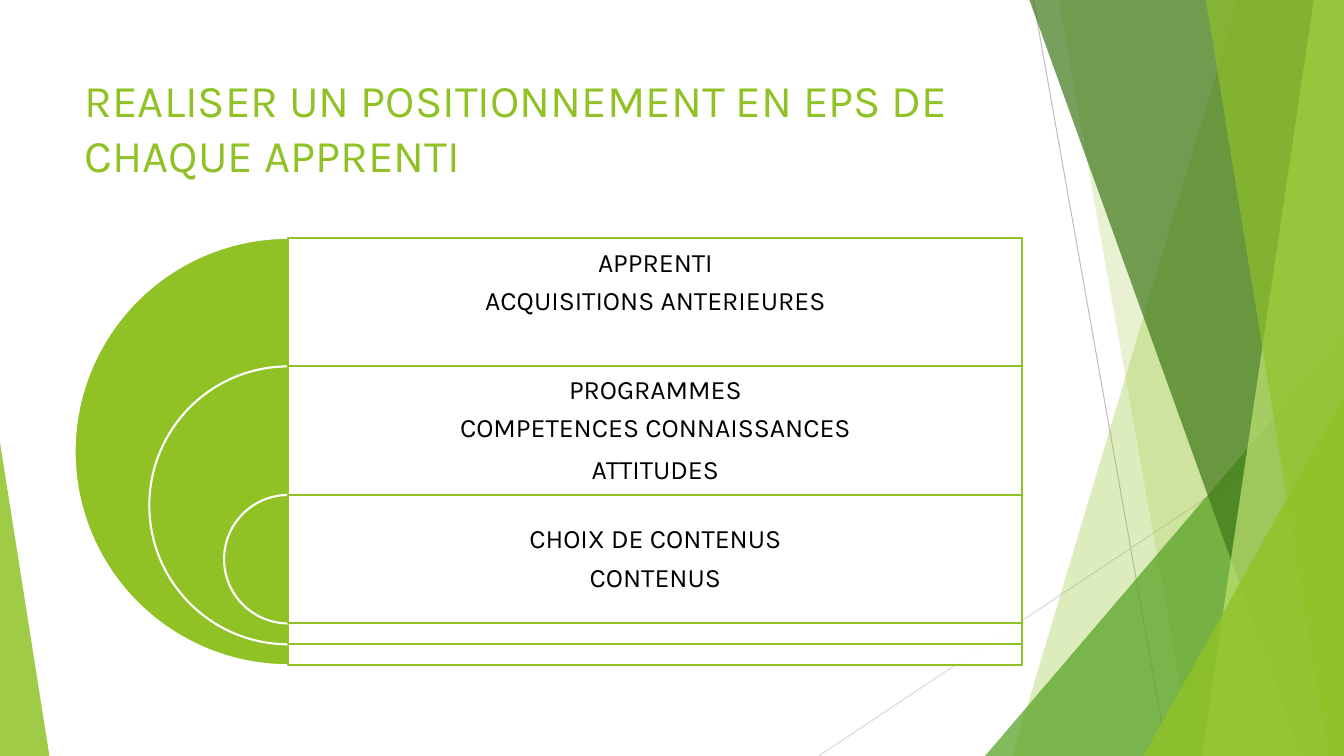
from lxml.etree import SubElement
from pptx import Presentation
from pptx.dml.color import RGBColor
from pptx.enum.shapes import MSO_CONNECTOR, MSO_SHAPE as SHAPE
from pptx.enum.text import MSO_ANCHOR as ANCHOR, PP_ALIGN as ALIGN
from pptx.oxml.ns import qn
from pptx.util import Inches, Pt

GREEN = RGBColor(0x90, 0xC2, 0x26)
LEAF = RGBColor(0x54, 0xA0, 0x21)
FOREST = RGBColor(0x3F, 0x78, 0x19)
LIME = RGBColor(0xC0, 0xE4, 0x74)
GREY = RGBColor(0xBF, 0xBF, 0xBF)
LIGHT_GREY = RGBColor(0xD9, 0xD9, 0xD9)
WHITE = RGBColor(0xFF, 0xFF, 0xFF)
BLACK = RGBColor(0, 0, 0)
FONT = "Karla"

# Content
TITLE = "REALISER UN POSITIONNEMENT EN EPS DE CHAQUE APPRENTI"
STAGES = [
    ["APPRENTI", "ACQUISITIONS ANTERIEURES"],
    ["PROGRAMMES", "COMPETENCES CONNAISSANCES", "ATTITUDES"],
    ["CHOIX DE CONTENUS", "CONTENUS"],
]
SPARE_BELOW = [0.38, 0, 0]  # extra room under each stage's text

# Backdrop: rays are (start, end, colour)
WIDTH, HEIGHT = 13.33, 7.5
RAYS = [
    ((10.25, 0), (11.58, HEIGHT), GREY),
    ((WIDTH, 4.03), (8.12, HEIGHT), LIGHT_GREY),
]
# Facets reach the right edge: (top left x, bottom left x, colour, opacity %)
# Wedges stand on the bottom edge: (left, width, height, apex share, colour, opacity %)
BACKDROP = [
    (12.28, 10.04, GREEN, 30),
    (10.5, 11.83, GREEN, 20),
    (9.77, 3.56, 4.17, 1, LEAF, 72),
    (10.21, 12.91, FOREST, 70),
    (13.03, 11.92, LIME, 70),
    (11.96, 13.18, GREEN, 65),
    (11.34, 1.99, 3.57, 1, GREEN, 80),
    (0, 0.49, 3.11, 0, GREEN, 85),
]

# Diagram grid
LEFT, TOP, COLUMN = 0.74, 2.36, 9.4
OUTER, ROW = 4.24, 1.275
SHRINK = (OUTER - ROW) / (len(STAGES) - 1)
AXIS = LEFT + OUTER / 2
PANEL_WIDTH = LEFT + COLUMN - AXIS
PAD = 0.08

prs = Presentation()
prs.slide_width, prs.slide_height = Inches(WIDTH), Inches(HEIGHT)
slide = prs.slides.add_slide(prs.slide_layouts[5])
shapes = slide.shapes


def paint(part, colour, opacity=100, outline=None):
    part.shadow.inherit = False
    part.fill.solid()
    part.fill.fore_color.rgb = colour
    if opacity < 100:
        solid = part.fill._xPr.find(qn("a:solidFill"))
        SubElement(solid[0], qn("a:alpha"), val=str(opacity * 1000))
    if outline is None:
        part.line.fill.background()
    else:
        part.line.color.rgb = outline
        part.line.width = Pt(1.5)


def add_preset(preset, *box):
    return shapes.add_shape(preset, *map(Inches, box))


def add_facet(top_x, bottom_x):
    corners = [(WIDTH, 0), (WIDTH, HEIGHT), (bottom_x, HEIGHT)]
    outline = shapes.build_freeform(Inches(top_x), 0)
    outline.add_line_segments([(Inches(x), Inches(y)) for x, y in corners])
    return outline.convert_to_shape()


def add_wedge(left, width, height, apex):
    wedge = add_preset(SHAPE.ISOSCELES_TRIANGLE, left, HEIGHT - height, width, height)
    wedge.adjustments[0] = apex
    return wedge


# Backdrop
for start, end, colour in RAYS:
    ray = shapes.add_connector(MSO_CONNECTOR.STRAIGHT, *map(Inches, start + end))
    ray.line.color.rgb = colour
    ray.line.width = Pt(0.75)
    SubElement(ray._element.spPr, qn("a:effectLst"))
for *geometry, colour, opacity in BACKDROP:
    add = add_facet if len(geometry) == 2 else add_wedge
    paint(add(*geometry), colour, opacity)

# Title
title = shapes.title
title.left, title.top = Inches(LEFT), Inches(0.67)
title.width, title.height = Inches(COLUMN), Inches(1.44)
title.text_frame.text = TITLE
title.text_frame.vertical_anchor = ANCHOR.TOP
heading = title.text_frame.paragraphs[0]
heading.alignment = ALIGN.LEFT
heading.font.size, heading.font.name = Pt(32.4), FONT
heading.font.color.rgb = GREEN

# Nested half discs, each with its panel and text
for i, (lines, spare) in enumerate(zip(STAGES, SPARE_BELOW)):
    top, size = TOP + i * ROW, OUTER - i * SHRINK
    disc = add_preset(SHAPE.PIE, AXIS - size / 2, top, size, size)
    disc.adjustments[0], disc.adjustments[1] = 54, 162
    paint(disc, GREEN, outline=WHITE)
    panel = add_preset(SHAPE.RECTANGLE, AXIS, top, PANEL_WIDTH, size)
    paint(panel, WHITE, 90, GREEN)

    label = shapes.add_textbox(*map(Inches, (AXIS, top, PANEL_WIDTH, ROW)))
    frame = label.text_frame
    frame.word_wrap = True
    frame.vertical_anchor = ANCHOR.MIDDLE
    frame.margin_left = frame.margin_right = frame.margin_top = Inches(PAD)
    frame.margin_bottom = Inches(PAD + spare)
    frame.text = "\n".join(lines)
    for paragraph in frame.paragraphs:
        paragraph.alignment = ALIGN.CENTER
        paragraph.line_spacing, paragraph.space_after = 0.9, Pt(7)
        paragraph.font.size, paragraph.font.name = Pt(19), FONT
        paragraph.font.color.rgb = BLACK
    if len(lines) > 2:
        paragraph.line_spacing, paragraph.space_after = 1.0, Pt(0)

prs.save("out.pptx")
